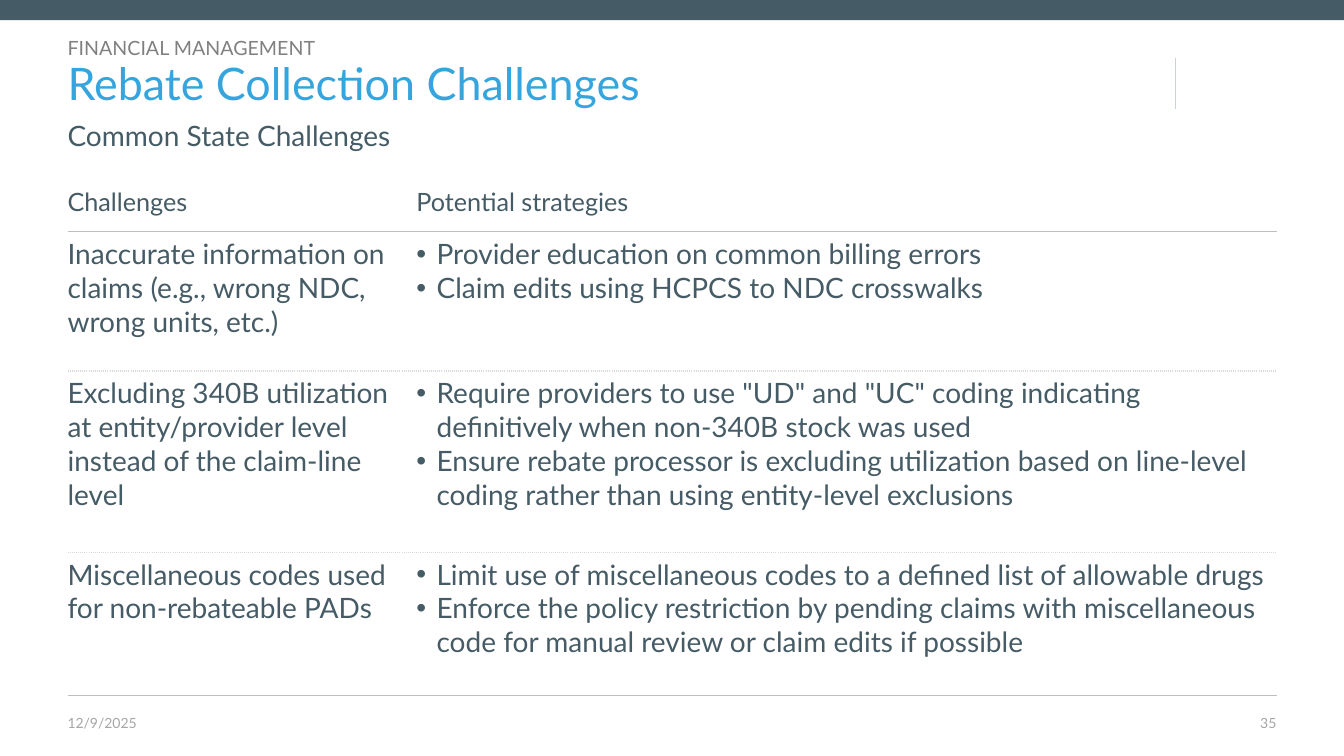
import pptx
import pptx.util
import pptx.dml.color
import pptx.enum.shapes
import pptx.enum.text
import pptx.oxml
import pptx.oxml.ns
from lxml import etree

PX = 9144
SLATE = "455B65"
ANCHOR = pptx.enum.text.MSO_ANCHOR
ALIGN = pptx.enum.text.PP_ALIGN


def color(value):
    return pptx.dml.color.RGBColor.from_string(value)


def style(para, size, value):
    para.font.name = "Lato"
    para.font.size = pptx.util.Pt(size)
    para.font.color.rgb = color(value)


deck = pptx.Presentation()
deck.slide_width = 1333 * PX
deck.slide_height = 750 * PX
page = deck.slides.add_slide(deck.slide_layouts[6])

band = page.shapes.add_shape(pptx.enum.shapes.MSO_SHAPE.RECTANGLE, 0, 0, deck.slide_width, 20 * PX)
band.shadow.inherit = False
band.fill.solid()
band.fill.fore_color.rgb = color(SLATE)
band.line.fill.background()

divider = page.shapes.add_connector(
    pptx.enum.shapes.MSO_CONNECTOR.STRAIGHT, 1166 * PX, 58 * PX, 1166 * PX, 108 * PX)
divider.line.color.rgb = color("C6D3D8")
divider.line.width = pptx.util.Pt(0.25)
etree.SubElement(divider.element.spPr, pptx.oxml.ns.qn("a:effectLst"))

texts = [
    ("Rebate Collection Challenges", 67, 59, 1050, 50, 32, "37A5DD", ANCHOR.MIDDLE, ALIGN.LEFT, 0.9, 7, 5),
    ("12/9/2025", 67, 709, 200, 22, 10, "A6A6A6", ANCHOR.TOP, ALIGN.LEFT, 1.0, 0, 0),
    ("35", 1166, 709, 100, 22, 10, "A6A6A6", ANCHOR.TOP, ALIGN.RIGHT, 1.0, 0, 0),
    ("Common State Challenges", 67, 110, 1050, 49, 20, SLATE, ANCHOR.TOP, ALIGN.LEFT, 1.08, 5, 5),
    ("FINANCIAL MANAGEMENT", 67, 35, 515, 22, 14, "808080", ANCHOR.MIDDLE, ALIGN.LEFT, 1.08, 5, 5),
]
for text, left, top, width, height, size, value, anchor, align, spacing, inset_top, inset_bottom in texts:
    box = page.shapes.add_textbox(left * PX, top * PX, width * PX, height * PX)
    frame = box.text_frame
    frame.word_wrap = True
    frame.vertical_anchor = anchor
    frame.margin_left = frame.margin_right = 0
    frame.margin_top = inset_top * PX
    frame.margin_bottom = inset_bottom * PX
    para = frame.paragraphs[0]
    para.text = text
    para.alignment = align
    para.line_spacing = spacing
    style(para, size, value)

rows = [
    ("Challenges", ["Potential strategies"]),
    ("Inaccurate information on claims (e.g., wrong NDC, wrong units, etc.)", [
        "Provider education on common billing errors",
        "Claim edits using HCPCS to NDC crosswalks"]),
    ("Excluding 340B utilization at entity/provider level instead of the claim-line level", [
        'Require providers to use "UD" and "UC" coding indicating definitively when non-340B stock was used',
        "Ensure rebate processor is excluding utilization based on line-level coding "
        "rather than using entity-level exclusions"]),
    ("Miscellaneous codes used for non-rebateable PADs", [
        "Limit use of miscellaneous codes to a defined list of allowable drugs",
        "Enforce the policy restriction by pending claims with miscellaneous code "
        "for manual review or claim edits if possible"]),
]
solid_rule = ("BFBFBF", "solid")
dotted_rule = ("D9D9D9", "sysDot")
rules = [None, solid_rule, dotted_rule, dotted_rule, solid_rule]

table = page.shapes.add_table(len(rows), 2, 67 * PX, 180 * PX, 1200 * PX, 510 * PX).table
table.horz_banding = False
table.first_row = False
for column, width in zip(table.columns, (346, 854)):
    column.width = width * PX
for row, height in zip(table.rows, (50, 138, 180, 142)):
    row.height = height * PX

for row_index, (challenge, strategies) in enumerate(rows):
    for column_index, lines in enumerate(([challenge], strategies)):
        cell = table.cell(row_index, column_index)
        cell.margin_left = 0
        cell.margin_right = 10 * PX
        cell.margin_top = cell.margin_bottom = 5 * PX
        cell.text = "\n".join(lines)
        for para in cell.text_frame.paragraphs:
            if row_index and column_index:
                properties = para._p.get_or_add_pPr()
                properties.set("marL", str(20 * PX))
                properties.set("indent", str(-20 * PX))
                etree.SubElement(properties, pptx.oxml.ns.qn("a:buFont"), typeface="Arial")
                etree.SubElement(properties, pptx.oxml.ns.qn("a:buChar"), char="•")
            style(para, 20 if row_index else 18, SLATE)

        borders = cell._tc.get_or_add_tcPr()
        sides = {"lnL": None, "lnR": None, "lnT": rules[row_index], "lnB": rules[row_index + 1]}
        for side, rule in sides.items():
            edge = etree.SubElement(borders, pptx.oxml.ns.qn("a:" + side), w="12700")
            if rule:
                paint = etree.SubElement(edge, pptx.oxml.ns.qn("a:solidFill"))
                etree.SubElement(paint, pptx.oxml.ns.qn("a:srgbClr"), val=rule[0])
                etree.SubElement(edge, pptx.oxml.ns.qn("a:prstDash"), val=rule[1])
            else:
                etree.SubElement(edge, pptx.oxml.ns.qn("a:noFill"))
        cell.fill.background()

deck.save("out.pptx")
